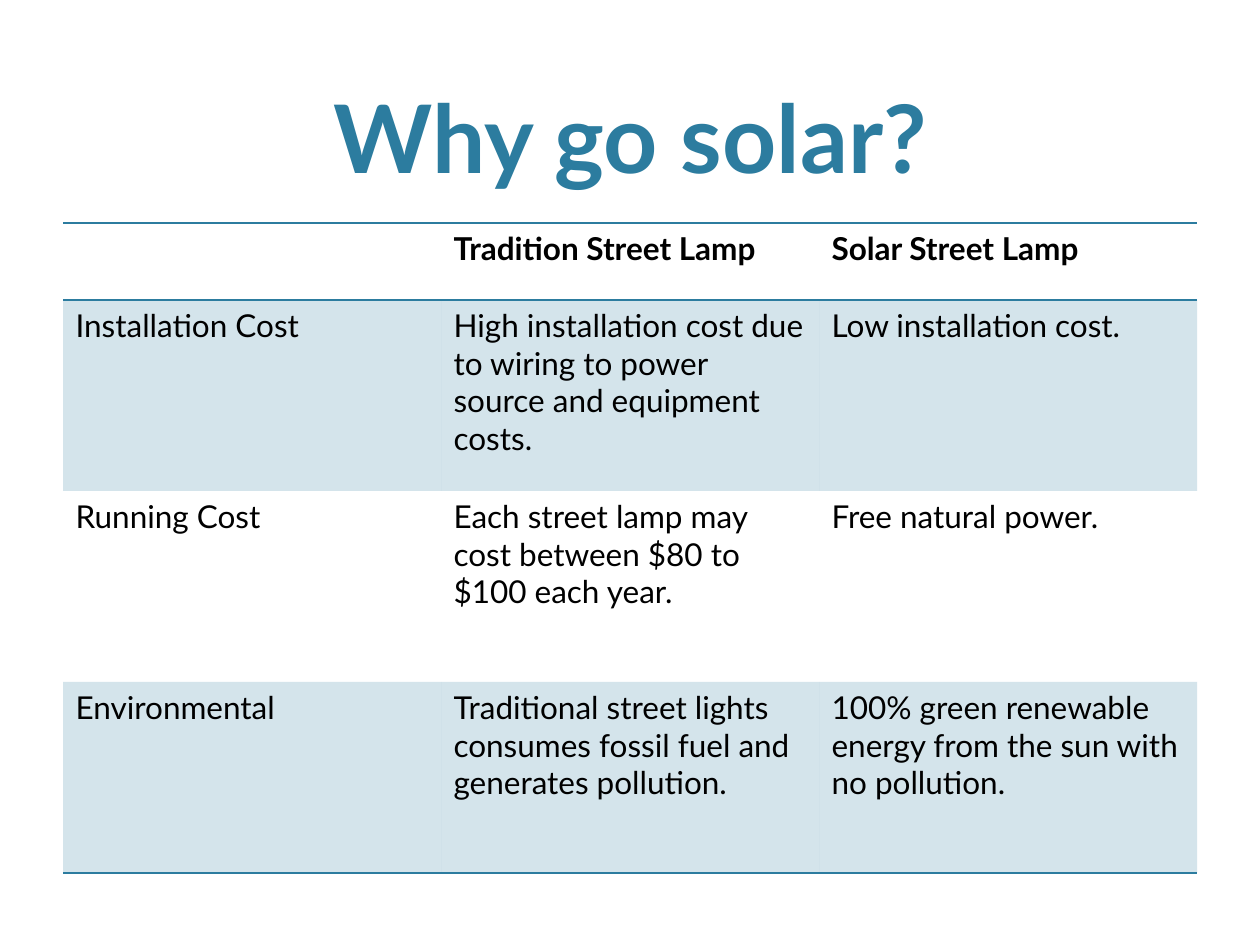
from dataclasses import dataclass

from lxml.etree import SubElement
from pptx import Presentation
from pptx.dml.color import RGBColor as Rgb
from pptx.enum.text import MSO_ANCHOR as Anchor, PP_ALIGN as Align
from pptx.oxml import parse_xml
from pptx.oxml.ns import nsdecls, qn
from pptx.util import Pt

SCALE = 914400 / 126


def px(n):
    return round(n * SCALE)


@dataclass(frozen=True)
class Theme:
    font: str = "Lato"
    blue: str = "2C7C9F"
    ink: str = "000000"
    title: int = 54
    body: int = 18
    tint: int = 20


class Deck:
    """Holds the theme and the current slide, and adds elements to it."""

    def __init__(self, show, theme):
        self.theme = theme
        self.slide = show.slides.add_slide(show.slide_layouts[6])

    def style(self, frame, size, color, bold=False):
        for para in frame.paragraphs:
            for run in para.runs:
                font = run.font
                font.name, font.size, font.bold = self.theme.font, Pt(size), bold
                font.color.rgb = Rgb.from_string(color)

    def title(self, text, x, y, w, h):
        frame = self.slide.shapes.add_textbox(px(x), px(y), px(w), px(h)).text_frame
        frame.word_wrap = True
        frame.vertical_anchor = Anchor.BOTTOM
        frame.text = text
        frame.paragraphs[0].alignment = Align.CENTER
        self.style(frame, self.theme.title, self.theme.blue, True)

    def fill(self, cell, tinted):
        if not tinted:
            cell.fill.background()
            return
        cell.fill.solid()
        cell.fill.fore_color.rgb = Rgb.from_string(self.theme.blue)
        color = cell._tc.tcPr.find(".//" + qn("a:srgbClr"))
        SubElement(color, qn("a:alpha"), val=str(self.theme.tint * 1000))

    def edges(self, cell, top, base):
        props = cell._tc.get_or_add_tcPr()
        solid = f'<a:solidFill><a:srgbClr val="{self.theme.blue}"/></a:solidFill>'
        sides = {"lnL": False, "lnR": False, "lnT": top, "lnB": base}
        for spot, (tag, drawn) in enumerate(sides.items()):
            paint = solid if drawn else "<a:noFill/>"
            width = Pt(1) if drawn else 0
            line = f'<a:{tag} {nsdecls("a")} w="{width}">{paint}</a:{tag}>'
            props.insert(spot, parse_xml(line))

    def table(self, rows, x, y, widths, heights):
        shape = self.slide.shapes.add_table(
            len(rows), len(widths), px(x), px(y), px(sum(widths)), px(sum(heights)))
        grid = shape.table
        grid.first_row = grid.horz_banding = False
        for col, width in zip(grid.columns, widths):
            col.width = px(width)
        for row, height in zip(grid.rows, heights):
            row.height = px(height)
        ruled = (0, 1, len(rows))
        for r, texts in enumerate(rows):
            for c, text in enumerate(texts):
                cell = grid.cell(r, c)
                cell.text_frame.text = text
                self.style(cell.text_frame, self.theme.body, self.theme.ink, r == 0)
                self.fill(cell, r % 2 == 1)
                self.edges(cell, r in ruled, r + 1 in ruled)


ROWS = [
    ("", "Tradition Street Lamp", "Solar Street Lamp"),
    ("Installation Cost",
     "High installation cost due to wiring to power source and equipment costs.",
     "Low installation cost."),
    ("Running Cost",
     "Each street lamp may cost between $80 to $100 each year.",
     "Free natural power."),
    ("Environmental",
     "Traditional street lights consumes fossil fuel and generates pollution.",
     "100% green renewable energy from the sun with no pollution."),
]


def main():
    show = Presentation()
    show.slide_width, show.slide_height = px(1260), px(945)
    deck = Deck(show, Theme())
    deck.title("Why go solar?", 76, 15, 1109, 184)
    deck.table(ROWS, 63, 223, [378] * 3, [77] + [191] * 3)
    show.save("out.pptx")


if __name__ == "__main__":
    main()
